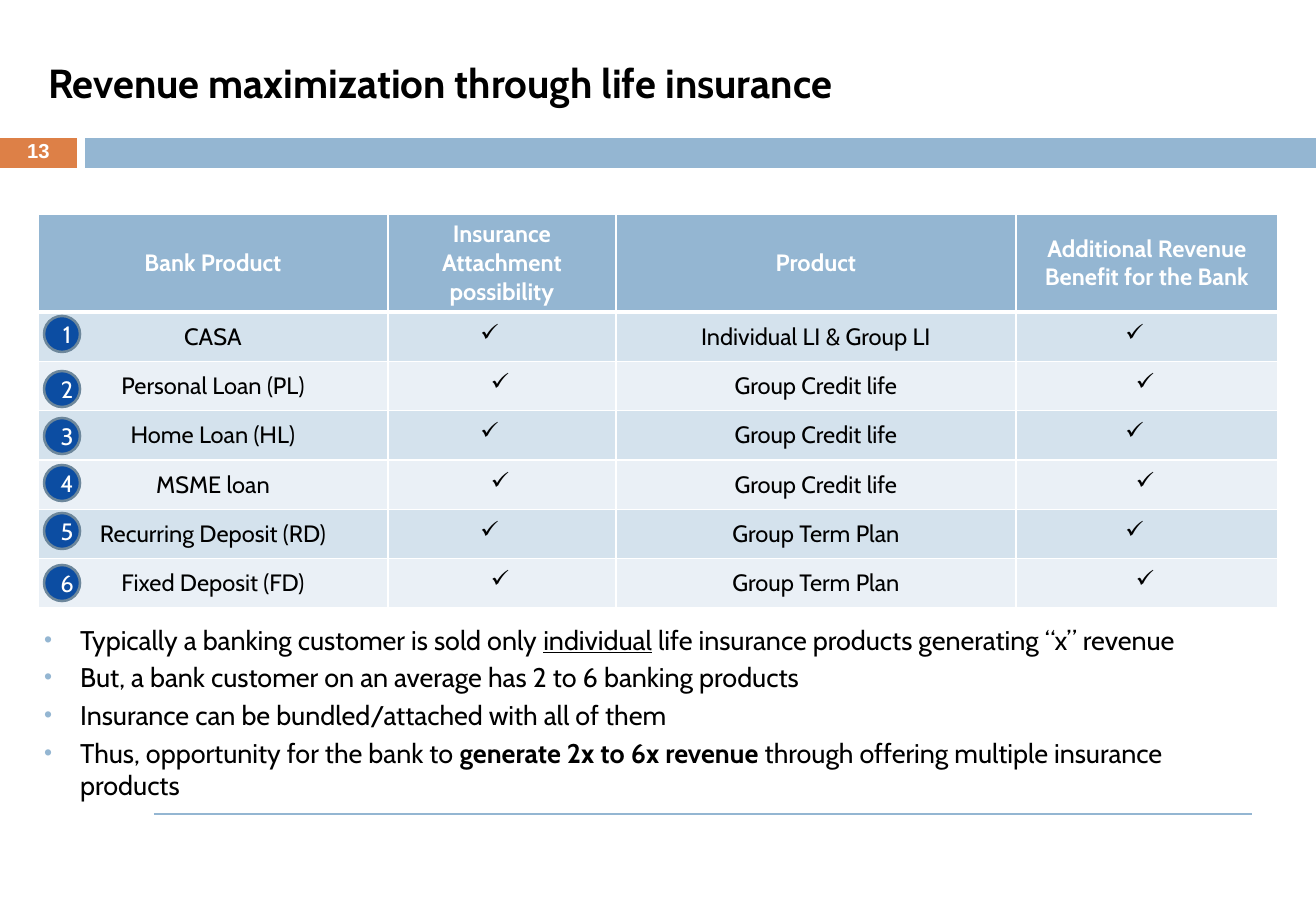
from lxml import etree
from pptx import Presentation
from pptx import util as u
from pptx.dml.color import RGBColor
from pptx.enum import shapes, text
from pptx.oxml import ns

PX = 7526
BLUE = RGBColor(0x94, 0xB6, 0xD2)
ORANGE = RGBColor(0xDD, 0x80, 0x47)
NAVY = RGBColor(0x0C, 0x4D, 0xA2)
SLATE = RGBColor(0x6D, 0x87, 0x9B)
DARK_BAND = RGBColor(0xD4, 0xE2, 0xED)
LIGHT_BAND = RGBColor(0xEA, 0xF0, 0xF6)
WHITE = RGBColor(0xFF, 0xFF, 0xFF)
BLACK = RGBColor(0, 0, 0)


def add_run(paragraph, wording, size, color, bold=False, font="Cabin"):
    run = paragraph.add_run()
    run.text = wording
    run.font.name = font
    run.font.size = u.Pt(size)
    run.font.bold = bold
    run.font.color.rgb = color
    return run


def add_bullet(paragraph, character, font, indent, color, percent):
    properties = paragraph._p.get_or_add_pPr()
    properties.set("marL", str(indent * PX))
    properties.set("indent", str(-indent * PX))
    bullet_color = etree.SubElement(properties, ns.qn("a:buClr"))
    etree.SubElement(bullet_color, ns.qn("a:srgbClr"), val=str(color))
    etree.SubElement(properties, ns.qn("a:buSzPct"), val=str(percent * 1000))
    etree.SubElement(properties, ns.qn("a:buFont"), typeface=font)
    etree.SubElement(properties, ns.qn("a:buChar"), char=character)


presentation = Presentation()
presentation.slide_width = 1316 * PX
presentation.slide_height = 911 * PX
slide = presentation.slides.add_slide(presentation.slide_layouts[1])

title = slide.shapes.title
body = slide.placeholders[1]
for placeholder, left, top, width, height, anchor in [
    (title, 36, 32, 1228, 101, text.MSO_ANCHOR.MIDDLE),
    (body, 32, 617, 1247, 181, text.MSO_ANCHOR.TOP),
]:
    placeholder.left, placeholder.top = left * PX, top * PX
    placeholder.width, placeholder.height = width * PX, height * PX
    placeholder.text_frame.auto_size = text.MSO_AUTO_SIZE.NONE
    placeholder.text_frame.vertical_anchor = anchor
paragraph = title.text_frame.paragraphs[0]
paragraph.alignment = text.PP_ALIGN.LEFT
add_run(paragraph, "Revenue maximization through life insurance", 24, BLACK, True)

for left, width, color in [(0, 77, ORANGE), (85, 1231, BLUE)]:
    bar = slide.shapes.add_shape(
        shapes.MSO_SHAPE.RECTANGLE, left * PX, 138 * PX, width * PX, 30 * PX)
    bar.shadow.inherit = False
    bar.fill.solid()
    bar.fill.fore_color.rgb = color
    bar.line.fill.background()

page_number = slide.shapes.add_textbox(0, 137 * PX, 77 * PX, 33 * PX)
page_number.text_frame.word_wrap = True
paragraph = page_number.text_frame.paragraphs[0]
paragraph.alignment = text.PP_ALIGN.CENTER
paragraph.line_spacing = 0.8
add_run(paragraph, "13", 12, WHITE, True, "Arial")

footer_rule = slide.shapes.add_connector(
    shapes.MSO_CONNECTOR.STRAIGHT, 154 * PX, 814 * PX, 1252 * PX, 814 * PX)
footer_rule.line.color.rgb = BLUE
footer_rule.line.width = u.Pt(1)
etree.SubElement(footer_rule.element.spPr, ns.qn("a:effectLst"))

rows = [
    ("Bank Product", "Insurance Attachment possibility", "Product",
     "Additional Revenue Benefit for the Bank"),
    ("CASA", "✓", "Individual LI & Group LI", "✓"),
    ("Personal Loan (PL)", "✓", "Group Credit life", "✓"),
    ("Home Loan (HL)", "✓", "Group Credit life", "✓"),
    ("MSME loan", "✓", "Group Credit life", "✓"),
    ("Recurring Deposit (RD)", "✓", "Group Term Plan", "✓"),
    ("Fixed Deposit (FD)", "✓", "Group Term Plan", "✓"),
]
table = slide.shapes.add_table(
    len(rows), 4, 38 * PX, 214 * PX, 1240 * PX, 394 * PX).table
for column, width in zip(table.columns, [350, 228, 400, 262]):
    column.width = width * PX
for row_index, row in enumerate(rows):
    header = row_index == 0
    table.rows[row_index].height = 98 * PX if header else 296 * PX // 6
    band = BLUE if header else DARK_BAND if row_index % 2 else LIGHT_BAND
    for column_index, wording in enumerate(row):
        cell = table.cell(row_index, column_index)
        cell.fill.solid()
        cell.fill.fore_color.rgb = band
        cell.vertical_anchor = text.MSO_ANCHOR.MIDDLE
        paragraph = cell.text_frame.paragraphs[0]
        paragraph.alignment = text.PP_ALIGN.CENTER
        if wording == "✓":
            cell.margin_left = (12 if row_index % 2 else 33) * PX
            add_bullet(paragraph, "ü", "Wingdings", 38, BLACK, 100)
            wording = " "
        add_run(paragraph, wording, 14, WHITE if header else BLACK, header)
        weights = {"L": 1, "R": 1, "T": 3 if row_index == 1 else 1, "B": 3 if header else 1}
        properties = cell._tc.get_or_add_tcPr()
        for position, (side, weight) in enumerate(weights.items()):
            border = etree.Element(ns.qn(f"a:ln{side}"), w=str(u.Pt(weight)))
            fill = etree.SubElement(border, ns.qn("a:solidFill"))
            etree.SubElement(fill, ns.qn("a:srgbClr"), val=str(WHITE))
            properties.insert(position, border)

for number, top in enumerate([316, 371, 418, 465, 513, 565], 1):
    badge = slide.shapes.add_shape(
        shapes.MSO_SHAPE.OVAL, 44 * PX, top * PX, 36 * PX, 36 * PX)
    badge.shadow.inherit = False
    badge.fill.solid()
    badge.fill.fore_color.rgb = NAVY
    badge.line.color.rgb = SLATE
    badge.line.width = u.Pt(1.5)
    frame = badge.text_frame
    frame.margin_left = 10 * PX
    frame.margin_right = frame.margin_top = frame.margin_bottom = 0
    frame.vertical_anchor = text.MSO_ANCHOR.MIDDLE
    paragraph = frame.paragraphs[0]
    paragraph.alignment = text.PP_ALIGN.CENTER
    add_run(paragraph, str(number), 14, WHITE)

points = [
    [("Typically a banking customer is sold only ", ""), ("individual", "underline"),
     (" life insurance products generating “x” revenue", "")],
    [("But, a bank customer on an average has 2 to 6 banking products", "")],
    [("Insurance can be bundled/attached with all of them", "")],
    [("Thus, opportunity for the bank to ", ""), ("generate 2x to 6x revenue ", "bold"),
     ("through offering multiple insurance products", "")],
]
frame = body.text_frame
for index, point in enumerate(points):
    paragraph = frame.add_paragraph() if index else frame.paragraphs[0]
    paragraph.space_before = u.Pt(3.2)
    add_bullet(paragraph, "•", "Arial", 36, BLUE, 85)
    for wording, style in point:
        run = add_run(paragraph, wording, 16, BLACK, style == "bold")
        run.font.underline = style == "underline"

presentation.save("out.pptx")
